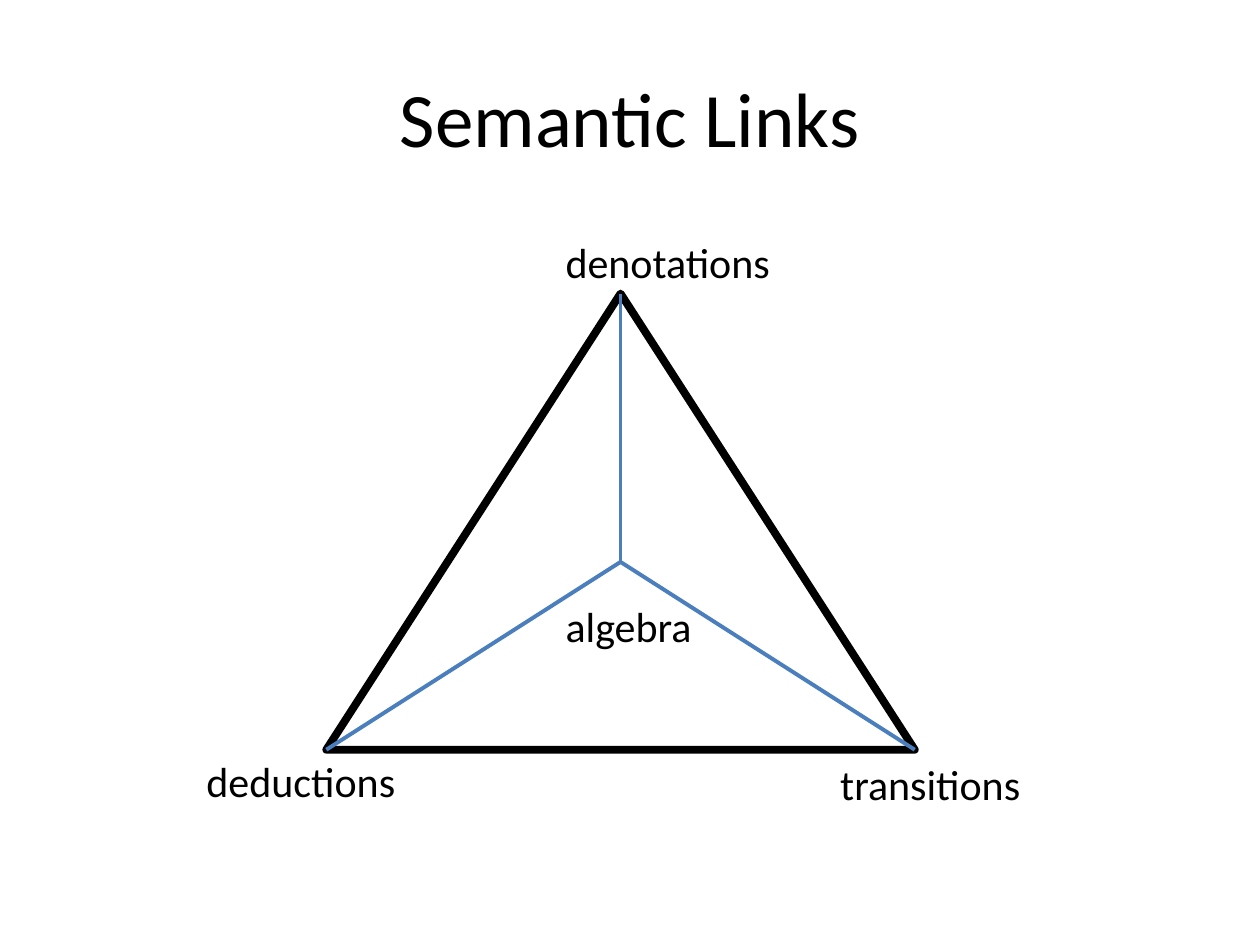
"""Build the Semantic Links slide: a triangle of semantics around algebra."""
from pptx import Presentation
from pptx.dml.color import RGBColor
from pptx.enum import shapes, text
from pptx.oxml import ns
from pptx.util import Inches, Pt
from lxml import etree

BLACK = RGBColor(0x00, 0x00, 0x00)
BLUE = RGBColor(0x4B, 0x7E, 0xBC)

deck = Presentation()
deck.slide_width, deck.slide_height = Inches(10), Inches(7.5)
slide = deck.slides.add_slide(deck.slide_layouts[6])


def write(words, box, size, wrap, anchor, align):
    label = slide.shapes.add_textbox(*map(Inches, box))
    frame = label.text_frame
    frame.word_wrap = wrap
    frame.vertical_anchor = anchor
    line = frame.paragraphs[0]
    line.alignment = align
    run = line.add_run()
    run.text = words
    for key, value in {"name": "Calibri", "size": Pt(size)}.items():
        setattr(run.font, key, value)
    run.font.color.rgb = BLACK
    return frame


write("Semantic Links", (0.5, 0.3, 9, 1.25), 44, True,
      text.MSO_ANCHOR.MIDDLE, text.PP_ALIGN.CENTER)

left, top, right, base = 2.59, 2.33, 7.26, 5.95
peak = (left + right) / 2
hub = (peak, 4.46)

outer = slide.shapes.add_shape(
    shapes.MSO_SHAPE.ISOSCELES_TRIANGLE,
    *map(Inches, (left, top, right - left, base - top)))
outer.shadow.inherit = False
outer.fill.background()
outer.line.color.rgb = BLACK
outer.line.width = Pt(4.5)

for tip in ((peak, top), (left, base), (right, base)):
    spoke = slide.shapes.add_connector(
        shapes.MSO_CONNECTOR.STRAIGHT, *map(Inches, hub + tip))
    spoke.line.color.rgb = BLUE
    spoke.line.width = Pt(2.25)
    etree.SubElement(spoke._element.spPr, ns.qn("a:effectLst"))

for words, x, y, width in (
    ("deductions", 1.54, 5.95, 1.72),
    ("transitions", 6.57, 5.97, 1.65),
    ("denotations", 4.39, 1.83, 1.84),
    ("algebra", 4.39, 4.72, 1.21),
):
    frame = write(words, (x, y, width, 0.5), 24, False,
                  text.MSO_ANCHOR.TOP, text.PP_ALIGN.LEFT)
    frame.auto_size = text.MSO_AUTO_SIZE.SHAPE_TO_FIT_TEXT

deck.save("out.pptx")
